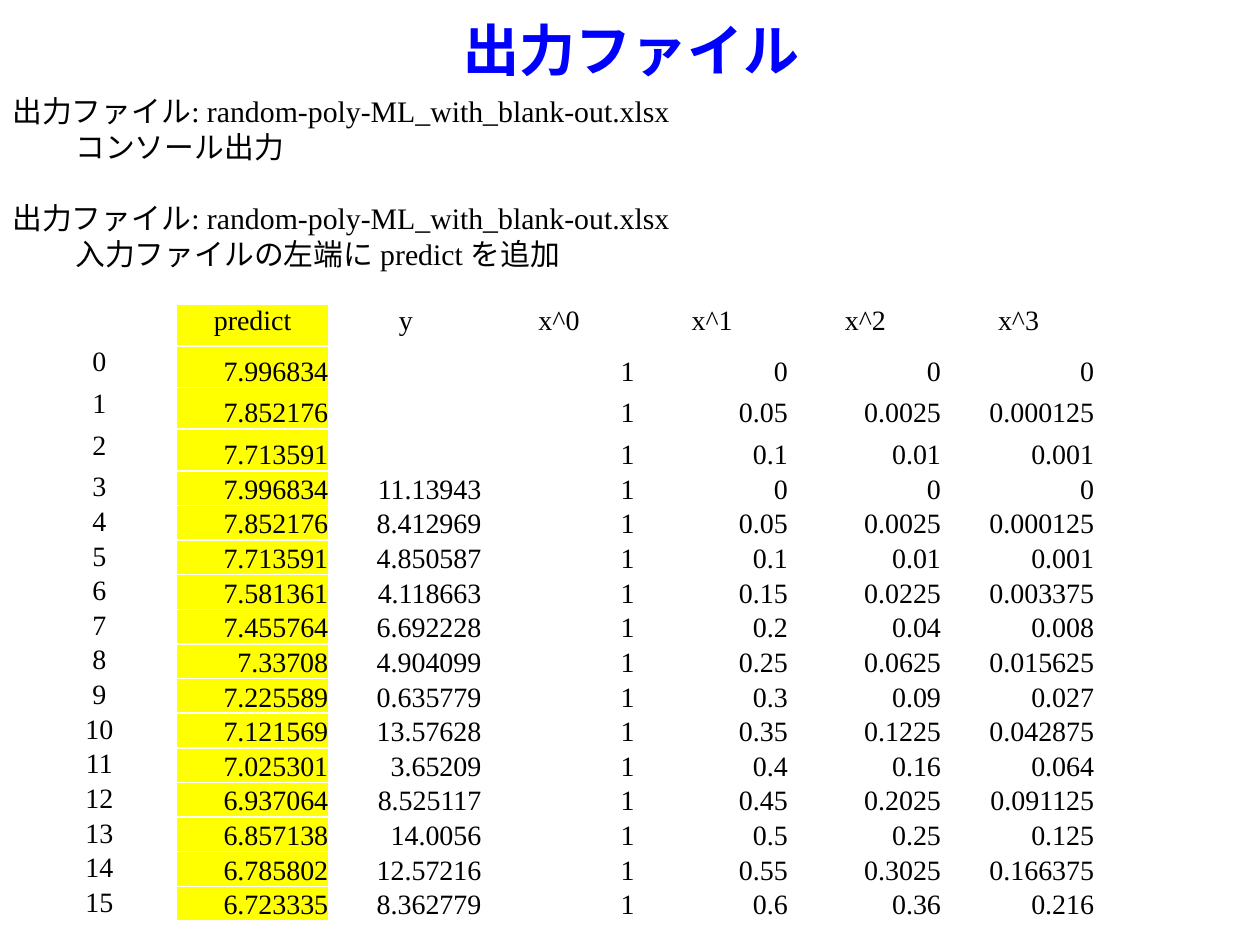
from lxml import etree
from pptx import Presentation
from pptx import util as u
from pptx.dml.color import RGBColor
from pptx.enum import text
from pptx.oxml import ns

BLUE = RGBColor(0x00, 0x00, 0xFF)
BLACK = RGBColor(0x00, 0x00, 0x00)
YELLOW = RGBColor(0xFF, 0xFF, 0x00)
WHITE = RGBColor(0xFF, 0xFF, 0xFF)

OUTPUT_FILE = "出力ファイル: random-poly-ML_with_blank-out.xlsx"
HEADER = ["", "predict", "y", "x^0", "x^1", "x^2", "x^3"]
PREDICTED = ["7.996834", "7.852176", "7.713591", "7.581361", "7.455764",
             "7.33708", "7.225589", "7.121569", "7.025301", "6.937064",
             "6.857138", "6.785802", "6.723335"]
OBSERVED = ["11.13943", "8.412969", "4.850587", "4.118663", "6.692228",
            "4.904099", "0.635779", "13.57628", "3.65209", "8.525117",
            "14.0056", "12.57216", "8.362779"]
BLANK_COUNT = 3
X_STEP = 0.05


def output_rows():
    """Header, the rows with a blank y, then the observed rows."""
    steps = [*range(BLANK_COUNT), *range(len(OBSERVED))]
    observed = [""] * BLANK_COUNT + OBSERVED
    rows = [HEADER]
    for index, (step, y) in enumerate(zip(steps, observed)):
        powers = [f"{(step * X_STEP) ** n:.6g}" for n in range(4)]
        rows.append([str(index), PREDICTED[step], y, *powers])
    return rows


class SlideBuilder:
    font = "Times New Roman"

    def __init__(self, slide):
        self.slide = slide

    def add_run(self, paragraph, wording, size, color=BLACK, bold=False):
        run = paragraph.add_run()
        run.text = wording
        run.font.name = self.font
        run.font.size = u.Pt(size)
        run.font.bold = bold
        run.font.color.rgb = color

    def title(self, wording, left, top, width, height):
        title = self.slide.shapes.title
        title.left, title.top = u.Cm(left), u.Cm(top)
        title.width, title.height = u.Cm(width), u.Cm(height)
        frame = title.text_frame
        frame.vertical_anchor = text.MSO_ANCHOR.MIDDLE
        heading = frame.paragraphs[0]
        heading.alignment = text.PP_ALIGN.CENTER
        self.add_run(heading, wording, 32, BLUE, bold=True)

    def explanation(self, groups, left, top, width, height):
        """Lines in groups, with one line of space between the groups."""
        box = self.slide.shapes.add_textbox(
            u.Cm(left), u.Cm(top), u.Cm(width), u.Cm(height))
        frame = box.text_frame
        frame.word_wrap = True
        line_height = u.Pt(20.4)
        paragraph = frame.paragraphs[0]
        for group_index, group in enumerate(groups):
            for line_index, line in enumerate(group):
                if group_index or line_index:
                    paragraph = frame.add_paragraph()
                paragraph.line_spacing = line_height
                if group_index and not line_index:
                    paragraph.space_before = line_height
                self.add_run(paragraph, line, 17)

    def border(self, cell):
        properties = cell._tc.get_or_add_tcPr()
        for side in ("a:lnL", "a:lnR", "a:lnT", "a:lnB"):
            line = etree.SubElement(properties, ns.qn(side), w=str(u.Pt(1)))
            fill = etree.SubElement(line, ns.qn("a:solidFill"))
            etree.SubElement(fill, ns.qn("a:srgbClr"), val=str(WHITE))

    def cell(self, cell, wording, is_label, highlighted):
        cell.margin_left = cell.margin_right = cell.margin_top = u.Cm(0.02)
        cell.margin_bottom = 0
        self.border(cell)
        if highlighted:
            cell.fill.solid()
            cell.fill.fore_color.rgb = YELLOW
        else:
            cell.fill.background()
        if not wording:
            return
        paragraph = cell.text_frame.paragraphs[0]
        if is_label:
            paragraph.alignment = text.PP_ALIGN.CENTER
        else:
            cell.vertical_anchor = text.MSO_ANCHOR.BOTTOM
            paragraph.alignment = text.PP_ALIGN.RIGHT
        self.add_run(paragraph, wording, 16)

    def table(self, rows, left, top, width):
        heights = [0.84 if "" in row else 0.68 for row in rows]
        table = self.slide.shapes.add_table(
            len(rows), len(rows[0]), u.Cm(left), u.Cm(top),
            u.Cm(width), u.Cm(sum(heights))).table
        table.first_row = table.horz_banding = False
        for r, (row, height) in enumerate(zip(rows, heights)):
            table.rows[r].height = u.Cm(height)
            for c, wording in enumerate(row):
                self.cell(table.cell(r, c), wording,
                          is_label=r == 0 or c == 0, highlighted=c == 1)


def main():
    deck = Presentation()
    deck.slide_width, deck.slide_height = u.Cm(25.4), u.Cm(19.05)
    builder = SlideBuilder(deck.slides.add_slide(deck.slide_layouts[5]))
    builder.title("出力ファイル", 0.03, 0, 25.4, 1.98)
    builder.explanation(
        [[OUTPUT_FILE, "\tコンソール出力"],
         [OUTPUT_FILE, "\t入力ファイルの左端に predict を追加"]],
        0, 1.75, 25.2, 3.96)
    builder.table(output_rows(), 0.46, 6.13, 21.62)
    deck.save("out.pptx")


if __name__ == "__main__":
    main()
